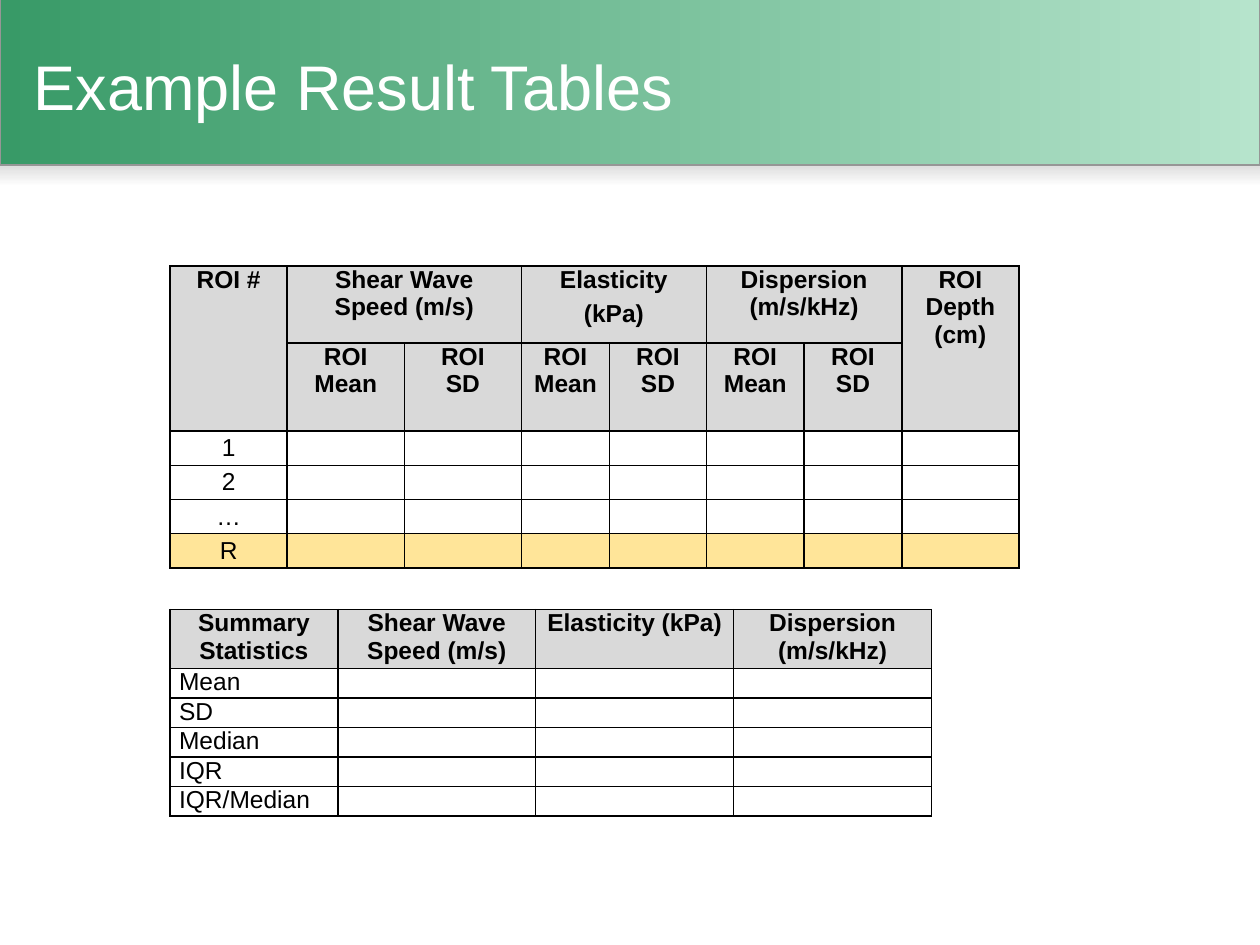
from lxml import etree
from pptx import Presentation
from pptx import util as u
from pptx.dml.color import RGBColor
from pptx.enum import shapes, text
from pptx.oxml import ns

Cm, Pt = u.Cm, u.Pt
HUES = {"dark": "389A67", "pale": "B6E4CC", "edge": "969696", "shade": "DDDDDD",
        "white": "FFFFFF", "black": "000000", "head": "D9D9D9", "last": "FFE599"}
MID, LEFT = text.PP_ALIGN.CENTER, text.PP_ALIGN.LEFT


def hue(name):
    return RGBColor.from_string(HUES[name])


def style(cell, words, fill, align, bold, anchor):
    cell.margin_left = cell.margin_right = Cm(0.18)
    cell.margin_top = cell.margin_bottom = 0
    cell.vertical_anchor = anchor
    props = cell._tc.get_or_add_tcPr()
    for side in ("lnL", "lnR", "lnT", "lnB"):
        line = etree.SubElement(props, ns.qn("a:" + side), w=str(Pt(1)))
        paint = etree.SubElement(line, ns.qn("a:solidFill"))
        etree.SubElement(paint, ns.qn("a:srgbClr"), val=HUES["black"])
    cell.fill.solid()
    cell.fill.fore_color.rgb = hue(fill)
    frame = cell.text_frame
    if not words:
        etree.SubElement(frame.paragraphs[0]._p, ns.qn("a:endParaRPr"), sz="1200")
        return
    for i, part in enumerate(words.split("\n")):
        para = frame.add_paragraph() if i else frame.paragraphs[0]
        para.alignment = align
        para.space_before = Pt(2 if i else 0)
        para.space_after = Pt(2)
        for j, piece in enumerate(part.split("|")):
            if j:
                para.add_line_break()
            run = para.add_run()
            run.text = piece
            run.font.name = "Arial"
            run.font.size = Pt(14)
            run.font.bold = bold
            run.font.color.rgb = hue("black")


deck = Presentation()
deck.slide_width, deck.slide_height = Cm(25.4), Cm(19.05)
slide = deck.slides.add_slide(deck.slide_layouts[6])

bands = [(3.33, 0.43, 270, "shade", "white", None),
         (-0.05, 3.38, 0, "dark", "pale", "edge")]
for top, high, angle, start, end, edge in bands:
    band = slide.shapes.add_shape(shapes.MSO_SHAPE.RECTANGLE, 0, Cm(top), Cm(25.4), Cm(high))
    band.shadow.inherit = False
    band.fill.gradient()
    band.fill.gradient_angle = angle
    for stop, name in zip(band.fill.gradient_stops, (start, end)):
        stop.color.rgb = hue(name)
    if edge:
        band.line.color.rgb = hue(edge)
        band.line.width = Pt(0.75)
    else:
        band.line.fill.background()

title = slide.shapes.add_textbox(Cm(0.43), Cm(0.36), Cm(17.15), Cm(2.72)).text_frame
title.word_wrap = True
title.vertical_anchor = text.MSO_ANCHOR.MIDDLE
run = title.paragraphs[0].add_run()
run.text = "Example Result Tables"
run.font.name = "Arial"
run.font.size = Pt(36)
run.font.color.rgb = hue("white")

blank = [""]
regions = [
    ["ROI #", "Shear Wave Speed (m/s)", "", "Elasticity\n(kPa)", "",
     "Dispersion (m/s/kHz)", "", "ROI Depth (cm)"],
    blank + ["ROI Mean", "ROI|SD"] * 3 + blank,
] + [[name] + blank * 7 for name in ("1", "2", "…", "R")]
totals = [
    ["Summary Statistics", "Shear Wave Speed (m/s)", "Elasticity (kPa)", "Dispersion (m/s/kHz)"],
] + [[name] + blank * 3 for name in ("Mean", "SD", "Median", "IQR", "IQR/Median")]

plans = [
    (5.36, regions, [2.36] * 3 + [1.78, 1.95, 1.97, 1.97, 2.36], [1.55, 1.65] + [0.69] * 4,
     2, MID, text.MSO_ANCHOR.MIDDLE, "last"),
    (12.29, totals, [3.38] + [3.99] * 3, [1.11] + [0.56] * 5,
     1, LEFT, text.MSO_ANCHOR.TOP, "white"),
]
grids = []
for top, data, wides, highs, heads, align, anchor, last in plans:
    grid = slide.shapes.add_table(len(highs), len(wides), Cm(3.43), Cm(top),
                                  Cm(sum(wides)), Cm(sum(highs))).table
    grid.first_row = grid.horz_banding = False
    for col, wide in zip(grid.columns, wides):
        col.width = Cm(wide)
    for r, (high, row) in enumerate(zip(highs, data)):
        grid.rows[r].height = Cm(high)
        for c, words in enumerate(row):
            if r < heads:
                style(grid.cell(r, c), words, "head", MID, True, text.MSO_ANCHOR.TOP)
            else:
                fill = last if r == len(highs) - 1 else "white"
                style(grid.cell(r, c), words, fill, align, False, anchor)
    grids.append(grid)

for c in (0, 7):
    grids[0].cell(0, c).merge(grids[0].cell(1, c))
for c in (1, 3, 5):
    grids[0].cell(0, c).merge(grids[0].cell(0, c + 1))

deck.save("out.pptx")
